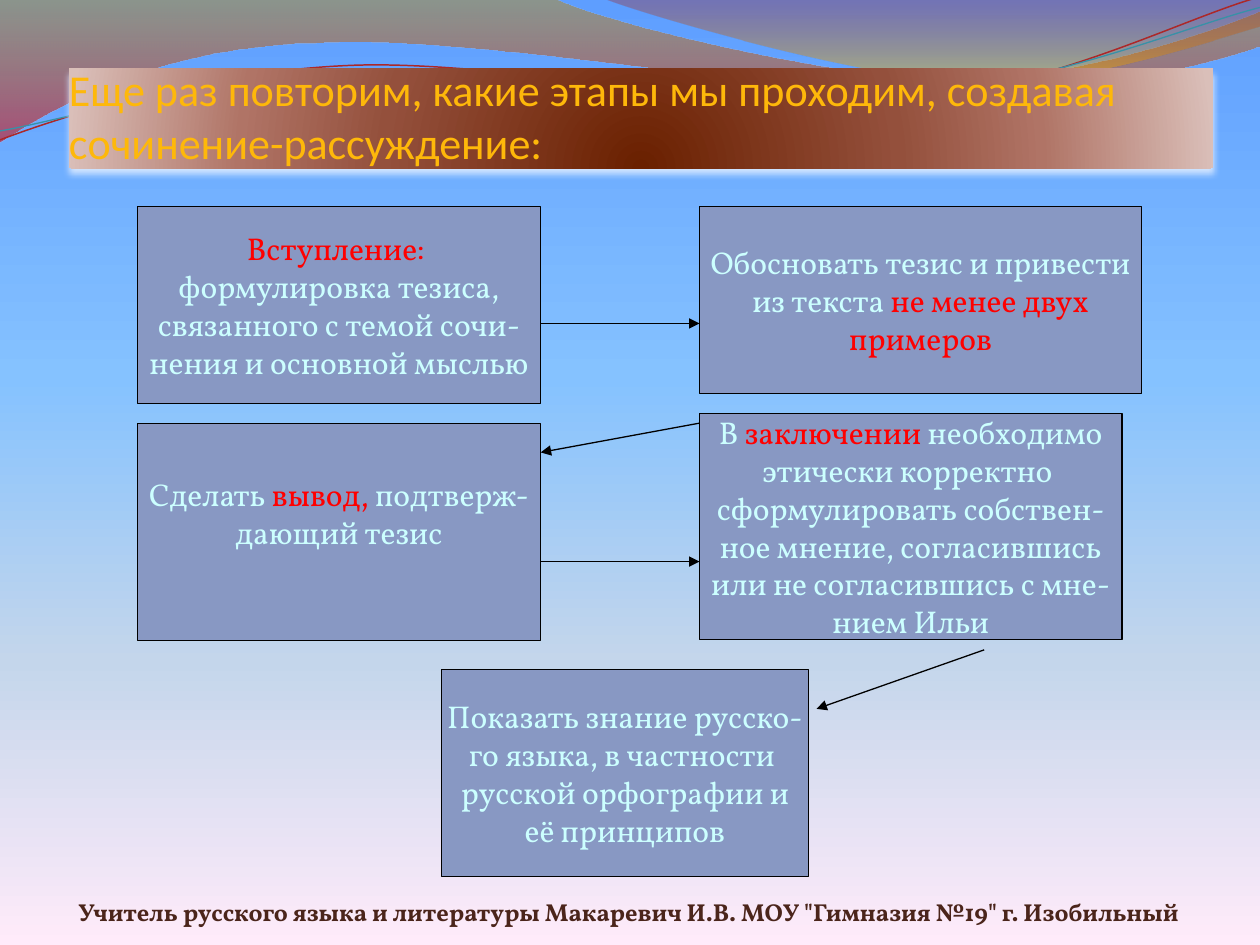
from math import cos, radians, sin

from lxml.etree import SubElement
from pptx import Presentation
from pptx.dml.color import RGBColor
from pptx.enum.shapes import MSO_CONNECTOR, MSO_SHAPE
from pptx.enum.text import MSO_ANCHOR, PP_ALIGN
from pptx.oxml.ns import qn
from pptx.util import Cm, Pt

GOLD = RGBColor(0xFE, 0xB8, 0x0A)
RED = RGBColor(0xFF, 0x00, 0x00)
PALE = RGBColor(0xCC, 0xFF, 0xFF)
BOX_BLUE = RGBColor(0x88, 0x98, 0xC3)
BLACK = RGBColor(0x00, 0x00, 0x00)
BROWN = RGBColor(0x4B, 0x25, 0x1B)
CRIMSON = RGBColor(0xAC, 0x28, 0x29)
TEAL = RGBColor(0x38, 0x91, 0xA7)
SHADOW = RGBColor(0xD0, 0xE4, 0xFF)

# Gradient stops: position in percent, colour, opacity in percent
SKY = [(0, RGBColor(0x5E, 0x9E, 0xFF), 100), (40, RGBColor(0x85, 0xC2, 0xFF), 100),
       (70, RGBColor(0xC4, 0xD6, 0xEB), 100), (100, RGBColor(0xFF, 0xEB, 0xFA), 100)]
LONG_WAVE = [(0, RGBColor(0xC3, 0x8B, 0x00), 45), (100, RGBColor(0xD6, 0x03, 0x05), 55)]
SHORT_WAVE = [(0, RGBColor(0xA1, 0x11, 0x12), 30), (80, RGBColor(0xE9, 0xA6, 0x00), 45)]
COPPER = [(0, RGBColor(0x6A, 0x20, 0x00), 100), (45, RGBColor(0x94, 0x50, 0x3C), 100),
          (70, RGBColor(0xB0, 0x74, 0x66), 100), (100, RGBColor(0xDA, 0xBF, 0xB9), 100)]

# Wave outlines in cm: a start, then lines (one point) or Bezier curves (three)
LONG_OUTLINE = [
    [(0, -0.03)], [(11.18, -0.03)],
    [(12.09, 0.43), (16.87, 1.6), (19.25, 1.6)],
    [(21.67, 1.6), (24.33, 0.66), (25.4, 0.23)], [(25.43, 0.91)],
    [(24.97, 1.12), (22.1, 1.93), (18.95, 1.91)],
    [(15.8, 1.91), (9.7, 0.71), (6.53, 0.86)],
    [(3.28, 0.89), (1.17, 2.11), (-0.03, 2.87)]]
SHORT_OUTLINE = [
    [(12.17, -0.03)], [(12.93, 0.28), (17.32, 1.57), (19.53, 1.65)],
    [(21.74, 1.75), (24.41, 0.81), (25.4, 0.53)], [(25.4, 0)]]
CRIMSON_CURVE = [
    [(0, 2.82)], [(1.22, 2.36), (4.01, 1.45), (7.04, 1.32)],
    [(10.03, 1.19), (15.06, 2.26), (18.11, 2.03)],
    [(21.16, 1.8), (23.83, 0.38), (25.35, -0.05)]]
TEAL_CURVE = [
    [(0, 2.64)], [(1.19, 2.44), (4.17, 1.55), (7.19, 1.42)],
    [(10.24, 1.3), (15.16, 2.11), (18.21, 1.91)],
    [(21.23, 1.7), (23.9, 0.53), (25.4, 0.15)]]
CURVE_TILT, CURVE_CENTER = -2.7, (12.68, 1.48)

# Steps: left, top, width, height in cm, extra bottom inset, lines of (text, colour)
STEPS = [
    (0, 0, 8.13, 3.96, 0, [
        [("Вступление: ", RED)], [("формулировка тезиса,", PALE)],
        [("связанного с темой сочи-", PALE)], [("нения и основной мыслью", PALE)]]),
    (11.33, 0, 8.92, 3.76, 0, [
        [("Обосновать тезис и привести", PALE)],
        [("из текста ", PALE), ("не менее двух", RED)], [("примеров", RED)]]),
    (0, 4.37, 8.13, 4.37, 0.76, [
        [("Сделать ", PALE), ("вывод, ", RED), ("подтверж-", PALE)],
        [("дающий тезис", PALE)]]),
    (11.33, 4.16, 8.52, 4.57, 0, [
        [("В ", PALE), ("заключении ", RED), ("необходимо", PALE)],
        [("этически корректно ", PALE)], [("сформулировать собствен-", PALE)],
        [("ное мнение, согласившись", PALE)], [("или не согласившись с мне-", PALE)],
        [("нием Ильи", PALE)]]),
    (6.13, 9.33, 7.4, 4.17, 0, [
        [("Показать знание русско-", PALE)], [("го языка, в частности ", PALE)],
        [("русской орфографии и", PALE)], [("её принципов", PALE)]]),
]
ARROWS = [(8.13, 2.35, 11.33, 2.35), (11.33, 4.36, 8.13, 4.95),
          (8.13, 7.15, 11.33, 7.15), (17.07, 8.93, 13.69, 10.12)]


def add_text(para, text, font="Vollkorn", size=18, color=PALE, bold=False):
    span = para.add_run()
    span.text = text
    span.font.name, span.font.size = font, Pt(size)
    span.font.color.rgb, span.font.bold = color, bold


def set_insets(frame, left, top, right, bottom):
    frame.margin_left, frame.margin_top = Cm(left), Cm(top)
    frame.margin_right, frame.margin_bottom = Cm(right), Cm(bottom)


def add_color(parent, color, opacity=100):
    node = SubElement(parent, qn("a:srgbClr"), val=str(color))
    if opacity < 100:
        SubElement(node, qn("a:alpha"), val=str(opacity * 1000))


def set_gradient(fill, properties, stops, radial=False):
    fill.solid()
    solid = properties.find(qn("a:solidFill"))
    gradient = SubElement(properties, qn("a:gradFill"), rotWithShape="1")
    properties.replace(solid, gradient)
    stop_list = SubElement(gradient, qn("a:gsLst"))
    for position, color, opacity in stops:
        stop = SubElement(stop_list, qn("a:gs"), pos=str(position * 1000))
        add_color(stop, color, opacity)
    if radial:
        center = SubElement(gradient, qn("a:path"), path="circle")
        SubElement(center, qn("a:fillToRect"), l="50000", t="100000", r="50000", b="0")
    else:
        SubElement(gradient, qn("a:lin"), ang="5400000", scaled="0")


def rotate(point, degrees, center):
    angle = radians(degrees)
    dx, dy = point[0] - center[0], point[1] - center[1]
    return (center[0] + dx * cos(angle) - dy * sin(angle),
            center[1] + dx * sin(angle) + dy * cos(angle))


def bend(shape, outline):
    """Join each three points of a curved segment into one Bezier curve."""
    lines = iter(shape._element.findall(".//" + qn("a:lnTo")))
    for segment in outline[1:]:
        parts = [next(lines) for _ in segment]
        if len(parts) == 3:
            curve = SubElement(parts[0].getparent(), qn("a:cubicBezTo"))
            parts[0].addprevious(curve)
            for part in parts:
                curve.append(part[0])
                part.getparent().remove(part)


def add_wave(page, left, top, outline, stops=None, color=None, width=0.75):
    tilt = 0 if stops else CURVE_TILT
    level = [rotate(point, -tilt, CURVE_CENTER) for segment in outline for point in segment]
    points = [(Cm(left + x), Cm(top + y)) for x, y in level]
    builder = page.shapes.build_freeform(*points[0])
    builder.add_line_segments(points[1:], close=stops is not None)
    wave = builder.convert_to_shape()
    bend(wave, outline)
    wave.rotation = tilt
    wave.shadow.inherit = False
    if stops:
        set_gradient(wave.fill, wave._element.spPr, stops)
        wave.line.fill.background()
    else:
        wave.fill.background()
        wave.line.color.rgb, wave.line.width = color, Pt(width)


def add_backdrop(page, left, top):
    background = page.background.fill
    background.solid()
    set_gradient(background, page._element.find(".//" + qn("p:bgPr")), SKY)
    add_wave(page, left, top, LONG_OUTLINE, stops=LONG_WAVE)
    add_wave(page, left, top, SHORT_OUTLINE, stops=SHORT_WAVE)
    add_wave(page, left, top, CRIMSON_CURVE, color=CRIMSON, width=0.85)
    add_wave(page, left, top, TEAL_CURVE, color=TEAL)


def add_title(page, left, top, width, height):
    title = page.shapes.title
    title.left, title.top, title.width, title.height = map(Cm, (left, top, width, height))
    properties = title._element.spPr
    set_gradient(title.fill, properties, COPPER, radial=True)
    effects = SubElement(properties, qn("a:effectLst"))
    shadow = SubElement(effects, qn("a:outerShdw"), blurRad="50800", dist="38100", dir="5400000")
    add_color(shadow, SHADOW)
    frame = title.text_frame
    frame.word_wrap, frame.vertical_anchor = True, MSO_ANCHOR.BOTTOM
    set_insets(frame, 0, 0.13, 0, 0)
    para = frame.paragraphs[0]
    para.alignment = PP_ALIGN.LEFT
    add_text(para, "Еще раз повторим, какие этапы мы проходим, создавая сочинение-рассуждение:",
             font="Calibri", size=25.2, color=GOLD)
    # Bring the title in front of the waves
    page.shapes._spTree.append(title._element)


def add_step(page, left, top, width, height, lift, lines):
    box = page.shapes.add_shape(MSO_SHAPE.RECTANGLE, *map(Cm, (left, top, width, height)))
    box.shadow.inherit = False
    box.fill.solid()
    box.fill.fore_color.rgb = BOX_BLUE
    box.line.color.rgb, box.line.width = BLACK, Pt(0.75)
    frame = box.text_frame
    frame.word_wrap, frame.vertical_anchor = False, MSO_ANCHOR.MIDDLE
    set_insets(frame, 0.25, 0.13, 0.25, 0.13 + lift)
    for index, line in enumerate(lines):
        para = frame.add_paragraph() if index else frame.paragraphs[0]
        para.alignment = PP_ALIGN.CENTER
        for text, color in line:
            add_text(para, text, color=color)


def add_arrow(page, *ends):
    arrow = page.shapes.add_connector(MSO_CONNECTOR.STRAIGHT, *map(Cm, ends))
    arrow.line.color.rgb, arrow.line.width = BLACK, Pt(0.75)
    SubElement(arrow.line._get_or_add_ln(), qn("a:tailEnd"), type="triangle")
    SubElement(arrow._element.spPr, qn("a:effectLst"))


def add_flowchart(page, left, top):
    for x, y, *step in STEPS:
        add_step(page, left + x, top + y, *step)
    for x1, y1, x2, y2 in ARROWS:
        add_arrow(page, left + x1, top + y1, left + x2, top + y2)


def add_credit(page, left, top, width, height):
    frame = page.shapes.add_textbox(*map(Cm, (left, top, width, height))).text_frame
    frame.word_wrap, frame.vertical_anchor = True, MSO_ANCHOR.BOTTOM
    set_insets(frame, 0, 0, 0, 0)
    add_text(frame.paragraphs[0], 'Учитель русского языка и литературы Макаревич И.В. '
             'МОУ "Гимназия №19" г. Изобильный', size=14, color=BROWN, bold=True)


def main():
    deck = Presentation()
    deck.slide_width, deck.slide_height = Cm(25.4), Cm(19.05)
    page = deck.slides.add_slide(deck.slide_layouts[5])
    add_backdrop(page, 0, 0)
    add_title(page, 1.39, 1.38, 23.06, 2.01)
    add_flowchart(page, 2.77, 4.17)
    add_credit(page, 1.58, 17.65, 23.22, 1.02)
    deck.save("out.pptx")


if __name__ == "__main__":
    main()
